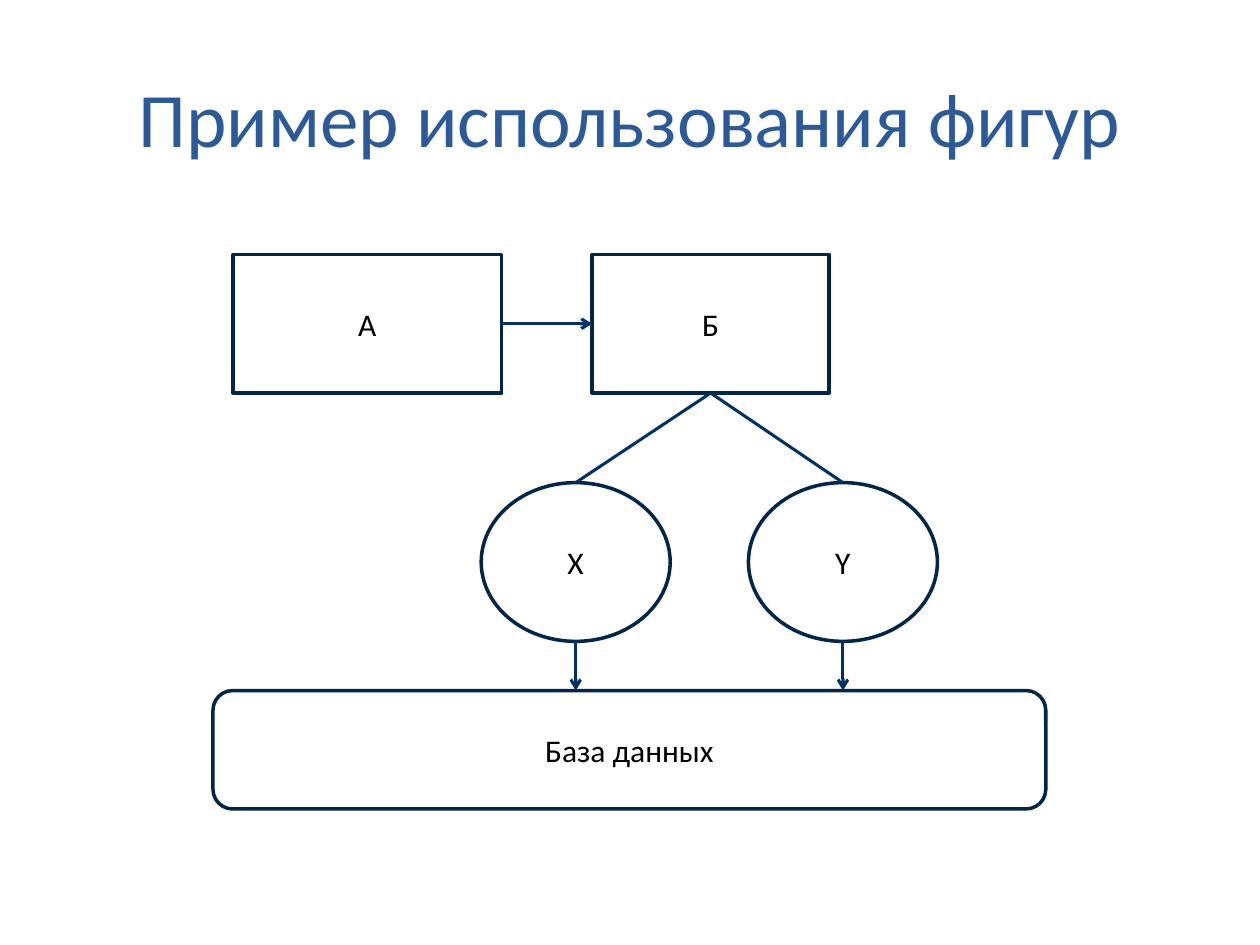
from dataclasses import dataclass

from lxml.etree import SubElement
from pptx import Presentation
from pptx.dml.color import RGBColor
from pptx.enum.shapes import MSO_CONNECTOR, MSO_SHAPE
from pptx.enum.text import MSO_ANCHOR, PP_ALIGN
from pptx.oxml.ns import qn
from pptx.util import Pt


@dataclass(frozen=True)
class Theme:
    font: str = "Calibri"
    title_color: RGBColor = RGBColor(0x2C, 0x5A, 0x98)
    text_color: RGBColor = RGBColor(0, 0, 0)
    outline: RGBColor = RGBColor(0x01, 0x26, 0x49)
    link: RGBColor = RGBColor(0x00, 0x33, 0x63)
    title_size: float = 44
    label_size: float = 18
    outline_width: float = 2
    link_width: float = 1.75


THEME = Theme()

# Content: lengths in points, boxes as left, top, width, height
TITLE = "Пример использования фигур"
TITLE_BOX = (36, 21.6, 648, 90)
ROW_TOP, ROW_HEIGHT = 145.4, 79.2
CIRCLE_TOP, CIRCLE_WIDTH, CIRCLE_HEIGHT = 275.8, 108, 90.7
NODES = {
    "a": ("А", MSO_SHAPE.RECTANGLE, (133.2, ROW_TOP, 153.4, ROW_HEIGHT)),
    "b": ("Б", MSO_SHAPE.RECTANGLE, (338.4, ROW_TOP, 135.4, ROW_HEIGHT)),
    "x": ("X", MSO_SHAPE.OVAL, (275, CIRCLE_TOP, CIRCLE_WIDTH, CIRCLE_HEIGHT)),
    "y": ("Y", MSO_SHAPE.OVAL, (427.7, CIRCLE_TOP, CIRCLE_WIDTH, CIRCLE_HEIGHT)),
    "database": ("База данных", MSO_SHAPE.ROUNDED_RECTANGLE, (121.7, 394.6, 475.9, 67.7)),
}


def edge(name, side):
    """Midpoint of one side of a node."""
    left, top, width, height = NODES[name][2]
    return {
        "top": (left + width / 2, top),
        "bottom": (left + width / 2, top + height),
        "left": (left, top + height / 2),
        "right": (left + width, top + height / 2),
    }[side]


def write(shape, text, size, color):
    frame = shape.text_frame
    frame.word_wrap = True
    frame.vertical_anchor = MSO_ANCHOR.MIDDLE
    paragraph = frame.paragraphs[0]
    paragraph.alignment = PP_ALIGN.CENTER
    run = paragraph.add_run()
    run.text = text
    run.font.name = THEME.font
    run.font.size = Pt(size)
    run.font.color.rgb = color


def add_node(slide, text, kind, box):
    shape = slide.shapes.add_shape(kind, *map(Pt, box))
    shape.shadow.inherit = False
    shape.fill.background()
    shape.line.color.rgb = THEME.outline
    shape.line.width = Pt(THEME.outline_width)
    write(shape, text, THEME.label_size, THEME.text_color)


def add_link(slide, start, end, arrow):
    link = slide.shapes.add_connector(MSO_CONNECTOR.STRAIGHT, *map(Pt, start + end))
    link.line.color.rgb = THEME.link
    link.line.width = Pt(THEME.link_width)
    if arrow:
        SubElement(link.line._get_or_add_ln(), qn("a:tailEnd"), type="arrow")
    SubElement(link._element.spPr, qn("a:effectLst"))


def main():
    presentation = Presentation()
    presentation.slide_width, presentation.slide_height = Pt(720), Pt(540)
    slide = presentation.slides.add_slide(presentation.slide_layouts[6])

    # Title
    title = slide.shapes.add_textbox(*map(Pt, TITLE_BOX))
    write(title, TITLE, THEME.title_size, THEME.title_color)

    # Nodes
    for text, kind, box in NODES.values():
        add_node(slide, text, kind, box)

    # Links: А to Б, Б to each circle, each circle down to the database
    add_link(slide, edge("a", "right"), edge("b", "left"), arrow=True)
    database_top = edge("database", "top")[1]
    for circle in ("x", "y"):
        add_link(slide, edge("b", "bottom"), edge(circle, "top"), arrow=False)
        start = edge(circle, "bottom")
        add_link(slide, start, (start[0], database_top), arrow=True)

    presentation.save("out.pptx")


if __name__ == "__main__":
    main()
